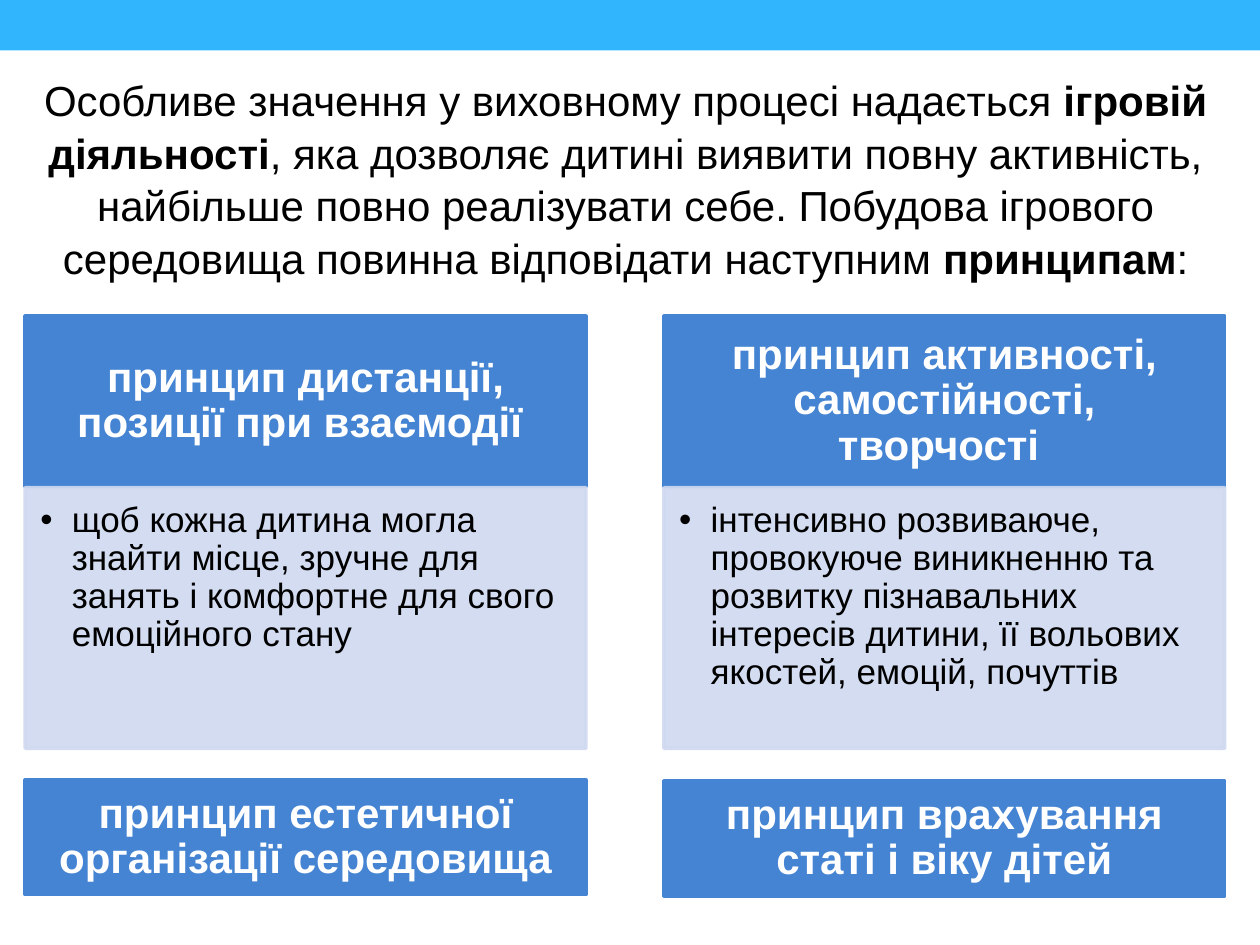
from lxml.etree import SubElement
from pptx import Presentation
from pptx.dml.color import RGBColor
from pptx.enum.shapes import MSO_SHAPE
from pptx.enum.text import MSO_ANCHOR, PP_ALIGN
from pptx.oxml.ns import qn
from pptx.util import Inches, Pt

COLORS = {"band": "31B6FD", "header": "4584D3", "body": "CFD9EF",
          "dark": "000000", "light": "FFFFFF"}
FONT = "Arial"
COLUMNS = (0.2, 5.27)
CARD_WIDTH = 4.45

INTRO = [
    ("Особливе значення у виховному процесі надається ", False),
    ("ігровій діяльності", True),
    (", яка дозволяє дитині виявити повну активність, найбільше повно реалізувати "
     "себе. Побудова ігрового середовища повинна відповідати наступним ", False),
    ("принципам", True),
    (":", False),
]
PRINCIPLES = [
    ("принцип дистанції, позиції при взаємодії ",
     "щоб кожна дитина могла знайти місце, зручне для занять і комфортне "
     "для свого емоційного стану"),
    ("принцип активності, самостійності, творчості ",
     "інтенсивно розвиваюче, провокуюче виникненню та розвитку пізнавальних "
     "інтересів дитини, її вольових якостей, емоцій, почуттів"),
]
SHORT_PRINCIPLES = [
    ("принцип естетичної організації середовища", 6.19),
    ("принцип врахування статі і віку дітей", 6.2),
]


def rgb(name):
    return RGBColor.from_string(COLORS[name])


def add_span(para, text, size, color, bold=False):
    span = para.add_run()
    span.text = text
    span.font.name = FONT
    span.font.size = Pt(size)
    span.font.bold = bold
    span.font.color.rgb = rgb(color)


def set_alpha(color_format_fill, percent):
    color = color_format_fill.find(qn("a:solidFill")).find(qn("a:srgbClr"))
    SubElement(color, qn("a:alpha")).set("val", str(percent * 1000))


def add_rectangle(page, left, top, width, height, color, outlined=True):
    box = page.shapes.add_shape(MSO_SHAPE.RECTANGLE, Inches(left), Inches(top),
                                Inches(width), Inches(height))
    box.shadow.inherit = False
    box.fill.solid()
    box.fill.fore_color.rgb = rgb(color)
    if outlined:
        box.line.color.rgb = rgb(color)
        box.line.width = Pt(2.08)
    else:
        box.line.fill.background()
    return box


def prepare_text(box, insets, anchor, align):
    frame = box.text_frame
    frame.word_wrap = True
    frame.vertical_anchor = anchor
    (frame.margin_left, frame.margin_top,
     frame.margin_right, frame.margin_bottom) = map(Inches, insets)
    para = frame.paragraphs[0]
    para.alignment = align
    para.line_spacing = 0.9
    return para


def add_header(page, left, top, height, text):
    box = add_rectangle(page, left, top, CARD_WIDTH, height, "header")
    para = prepare_text(box, (0.19, 0.11, 0.19, 0.11), MSO_ANCHOR.MIDDLE, PP_ALIGN.CENTER)
    add_span(para, text, 24, "light", bold=True)


def add_body(page, left, top, height, text):
    box = add_rectangle(page, left, top, CARD_WIDTH, height, "body")
    properties = box.element.spPr
    for part in (properties, properties.find(qn("a:ln"))):
        set_alpha(part, 90)
    para = prepare_text(box, (0.12, 0.12, 0.16, 0.17), MSO_ANCHOR.TOP, PP_ALIGN.LEFT)
    settings = para._p.get_or_add_pPr()
    settings.set("marL", str(Inches(0.25)))
    settings.set("indent", str(Inches(-0.25)))
    SubElement(settings, qn("a:buFont")).set("typeface", FONT)
    SubElement(settings, qn("a:buChar")).set("char", "•")
    add_span(para, text, 20, "dark")


def add_intro(page):
    box = page.shapes.add_textbox(Inches(0.12), Inches(0.52), Inches(9.69), Inches(2.05))
    box.text_frame.word_wrap = True
    para = box.text_frame.paragraphs[0]
    para.alignment = PP_ALIGN.CENTER
    para.line_spacing = 1.05
    for text, bold in INTRO:
        add_span(para, text, 24, "dark", bold)


def main():
    deck = Presentation()
    deck.slide_width, deck.slide_height = Inches(10), Inches(7.5)
    page = deck.slides.add_slide(deck.slide_layouts[6])

    # Top band and introduction
    add_rectangle(page, 0, 0, 10, 0.4, "band", outlined=False)
    add_intro(page)

    # Principles with an explanation
    for left, (header, body) in zip(COLUMNS, PRINCIPLES):
        add_header(page, left, 2.51, 1.35, header)
        add_body(page, left, 3.87, 2.07, body)

    # Principles with a header only
    for left, (header, top) in zip(COLUMNS, SHORT_PRINCIPLES):
        add_header(page, left, top, 0.91, header)

    deck.save("out.pptx")


if __name__ == "__main__":
    main()
